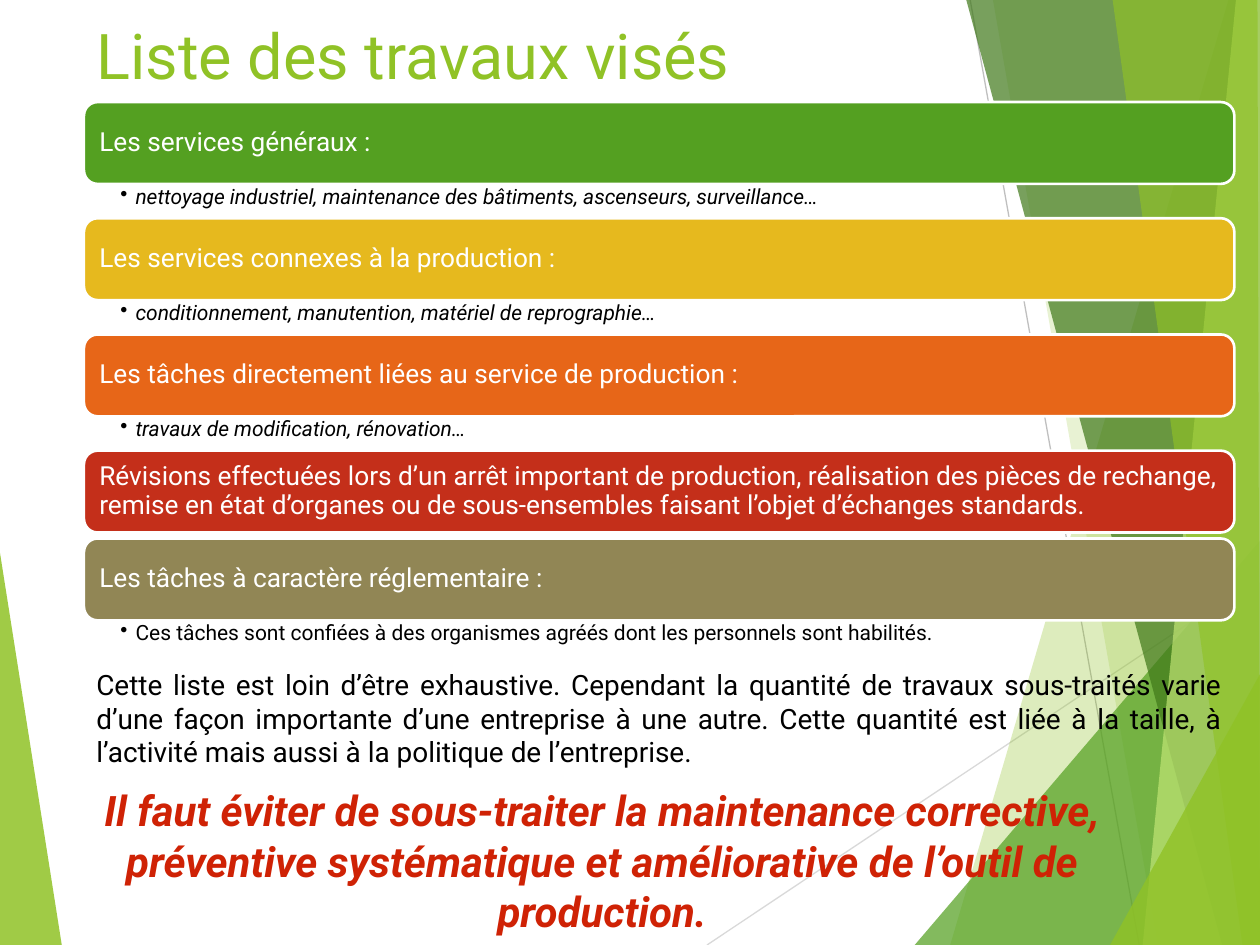
"""Build the slide listing the subcontracted maintenance works."""
from dataclasses import dataclass

from lxml.etree import SubElement
from pptx import Presentation
from pptx.dml.color import RGBColor
from pptx.enum.shapes import MSO_CONNECTOR, MSO_SHAPE
from pptx.enum.text import MSO_ANCHOR, MSO_AUTO_SIZE, PP_ALIGN
from pptx.oxml.ns import qn
from pptx.util import Pt


@dataclass(frozen=True)
class Theme:
    font: str = "Roboto"
    lime: str = "90C226"
    green: str = "54A021"
    forest: str = "3F7819"
    pale: str = "C0E474"
    yellow: str = "E6B91E"
    orange: str = "E76618"
    red: str = "C42F1A"
    olive: str = "918655"
    alert: str = "CF2205"
    white: str = "FFFFFF"
    black: str = "000000"
    light_grey: str = "D9D9D9"
    grey: str = "BFBFBF"
    title_size: int = 36
    alert_size: int = 24
    body_size: int = 16
    band_size: int = 15
    detail_size: int = 12


THEME = Theme()
WIDTH, HEIGHT = 720, 540
LEFT, BAND_WIDTH, BAND_HEIGHT = 48, 657.4, 46.8
BAND_TOP, DETAIL_HEIGHT, BAND_GAP = 58.3, 19.6, 3.4

RAYS = [
    ((404, 540), (720, 329), THEME.light_grey),
    ((554.4, 0), (651, 540), THEME.grey),
]
FACETS = [
    (THEME.lime, 85, [(0, 316), (35.3, 540), (0, 540)]),
    (THEME.lime, 30, [(702, 0), (543, 540), (720, 540), (720, 0)]),
    (THEME.lime, 20, [(567.4, 0), (661.7, 540), (720, 540), (720, 0)]),
    (THEME.green, 72, [(522.7, 540), (720, 309), (720, 540)]),
    (THEME.forest, 70, [(552.2, 0), (698.4, 540), (720, 540), (720, 0)]),
    (THEME.pale, 70, [(706.3, 0), (653, 540), (720, 540), (720, 0)]),
    (THEME.lime, 65, [(635.8, 0), (710, 540), (720, 540), (718.6, 0)]),
    (THEME.lime, 80, [(634.3, 540), (720, 385.2), (720, 540)]),
]
WORKS = [
    (THEME.green, "Les services généraux :",
     "nettoyage industriel, maintenance des bâtiments, ascenseurs, surveillance…", True),
    (THEME.yellow, "Les services connexes à la production :",
     "conditionnement, manutention, matériel de reprographie…", True),
    (THEME.orange, "Les tâches directement liées au service de production :",
     "travaux de modification, rénovation…", True),
    (THEME.red, "Révisions effectuées lors d’un arrêt important de production, "
     "réalisation des pièces de rechange, remise en état d’organes ou de "
     "sous-ensembles faisant l’objet d’échanges standards.", None, False),
    (THEME.olive, "Les tâches à caractère réglementaire :",
     "Ces tâches sont confiées à des organismes agréés dont les personnels "
     "sont habilités.", False),
]
REMARK = (
    "Cette liste est loin d’être exhaustive. Cependant la quantité de travaux "
    "sous-traités varie d’une façon importante d’une entreprise à une autre. "
    "Cette quantité est liée à la taille, à l’activité mais aussi à la politique "
    "de l’entreprise."
)
WARNING = (
    "Il faut éviter de sous-traiter la maintenance corrective, préventive "
    "systématique et améliorative de l’outil de production."
)


def assign(target, formats):
    """Set every attribute named in formats."""
    for name, value in formats.items():
        setattr(target, name, value)


def margins(left, top, right, bottom):
    """Return text frame margins given in points."""
    sides = ("margin_left", "margin_top", "margin_right", "margin_bottom")
    return dict(zip(sides, map(Pt, (left, top, right, bottom))))


class SlideMaker:
    """Hold the theme and the current slide."""

    def __init__(self, theme, slide):
        self.theme, self.slide = theme, slide

    def put_text(self, holder, text, size, color, frame=None, paragraph=None, font=None):
        """Fill a shape with one formatted paragraph."""
        assign(holder.text_frame, {"word_wrap": True, "auto_size": MSO_AUTO_SIZE.NONE,
                                   "vertical_anchor": MSO_ANCHOR.TOP, **(frame or {})})
        line = holder.text_frame.paragraphs[0]
        assign(line, {"alignment": PP_ALIGN.LEFT, **(paragraph or {})})
        run = line.add_run()
        run.text = text
        assign(run.font, {"name": self.theme.font, "size": Pt(size), **(font or {})})
        run.font.color.rgb = RGBColor.from_string(color)
        return line

    def title(self, text, left, top, width, height):
        """Place the title placeholder in front of the decoration."""
        heading = self.slide.shapes.title
        assign(heading, {"left": Pt(left), "top": Pt(top),
                         "width": Pt(width), "height": Pt(height)})
        self.slide.shapes._spTree.append(heading._element)
        self.put_text(heading, text, self.theme.title_size, self.theme.lime)

    def ray(self, start, end, color):
        """Draw a thin decorative line."""
        ray = self.slide.shapes.add_connector(
            MSO_CONNECTOR.STRAIGHT, *map(Pt, start + end))
        ray.line.color.rgb = RGBColor.from_string(color)
        ray.line.width = Pt(0.75)
        SubElement(ray._element.spPr, qn("a:effectLst"))

    def facet(self, color, opacity, corners):
        """Draw a translucent polygon."""
        points = [(Pt(x), Pt(y)) for x, y in corners]
        builder = self.slide.shapes.build_freeform(*points[0])
        builder.add_line_segments(points[1:], close=True)
        facet = builder.convert_to_shape()
        facet.shadow.inherit = False
        facet.fill.solid()
        facet.fill.fore_color.rgb = RGBColor.from_string(color)
        facet.line.fill.background()
        tint = facet._element.spPr.find(qn("a:solidFill"))[0]
        SubElement(tint, qn("a:alpha"), val=str(opacity * 1000))

    def band(self, text, color, top):
        """Draw a rounded heading band."""
        band = self.slide.shapes.add_shape(
            MSO_SHAPE.ROUNDED_RECTANGLE,
            *map(Pt, (LEFT, top, BAND_WIDTH, BAND_HEIGHT)))
        band.shadow.inherit = False
        band.fill.solid()
        band.fill.fore_color.rgb = RGBColor.from_string(color)
        band.line.color.rgb = RGBColor.from_string(self.theme.white)
        band.line.width = Pt(1.5)
        self.put_text(band, text, self.theme.band_size, self.theme.white,
                      {"vertical_anchor": MSO_ANCHOR.MIDDLE, **margins(6.5, 4.3, 6.5, 4.3)},
                      {"line_spacing": 0.9})

    def passage(self, text, size, color, box, **formats):
        """Add a text box and return its paragraph."""
        passage = self.slide.shapes.add_textbox(*map(Pt, box))
        return self.put_text(passage, text, size, color, **formats)

    def detail(self, text, top, italic):
        """Add the bulleted detail under a band."""
        line = self.passage(text, self.theme.detail_size, self.theme.black,
                            (LEFT, top, BAND_WIDTH, DETAIL_HEIGHT),
                            frame=margins(20.9, 1.4, 8.6, 1.4),
                            paragraph={"level": 1, "line_spacing": 0.9},
                            font={"italic": italic})
        properties = line._p.get_or_add_pPr()
        properties.set("marL", str(Pt(8.6)))
        properties.set("indent", str(-Pt(8.6)))
        SubElement(properties, qn("a:buChar"), char="•")


def main():
    """Compose and save the slide."""
    deck = Presentation()
    assign(deck, {"slide_width": Pt(WIDTH), "slide_height": Pt(HEIGHT)})
    maker = SlideMaker(THEME, deck.slides.add_slide(deck.slide_layouts[5]))
    for ray in RAYS:
        maker.ray(*ray)
    for facet in FACETS:
        maker.facet(*facet)
    maker.title("Liste des travaux visés", LEFT, 6, 500, 104)
    top = BAND_TOP
    for color, heading, detail, italic in WORKS:
        maker.band(heading, color, top)
        top += BAND_HEIGHT
        if detail:
            maker.detail(detail, top, italic)
        top += DETAIL_HEIGHT if detail else BAND_GAP
    maker.passage(REMARK, THEME.body_size, THEME.black, (LEFT, 378, BAND_WIDTH, 65.5),
                  paragraph={"alignment": PP_ALIGN.JUSTIFY})
    maker.passage(WARNING, THEME.alert_size, THEME.alert, (50.4, 445, 587.5, 94.3),
                  paragraph={"alignment": PP_ALIGN.CENTER},
                  font={"bold": True, "italic": True})
    deck.save("out.pptx")


if __name__ == "__main__":
    main()
